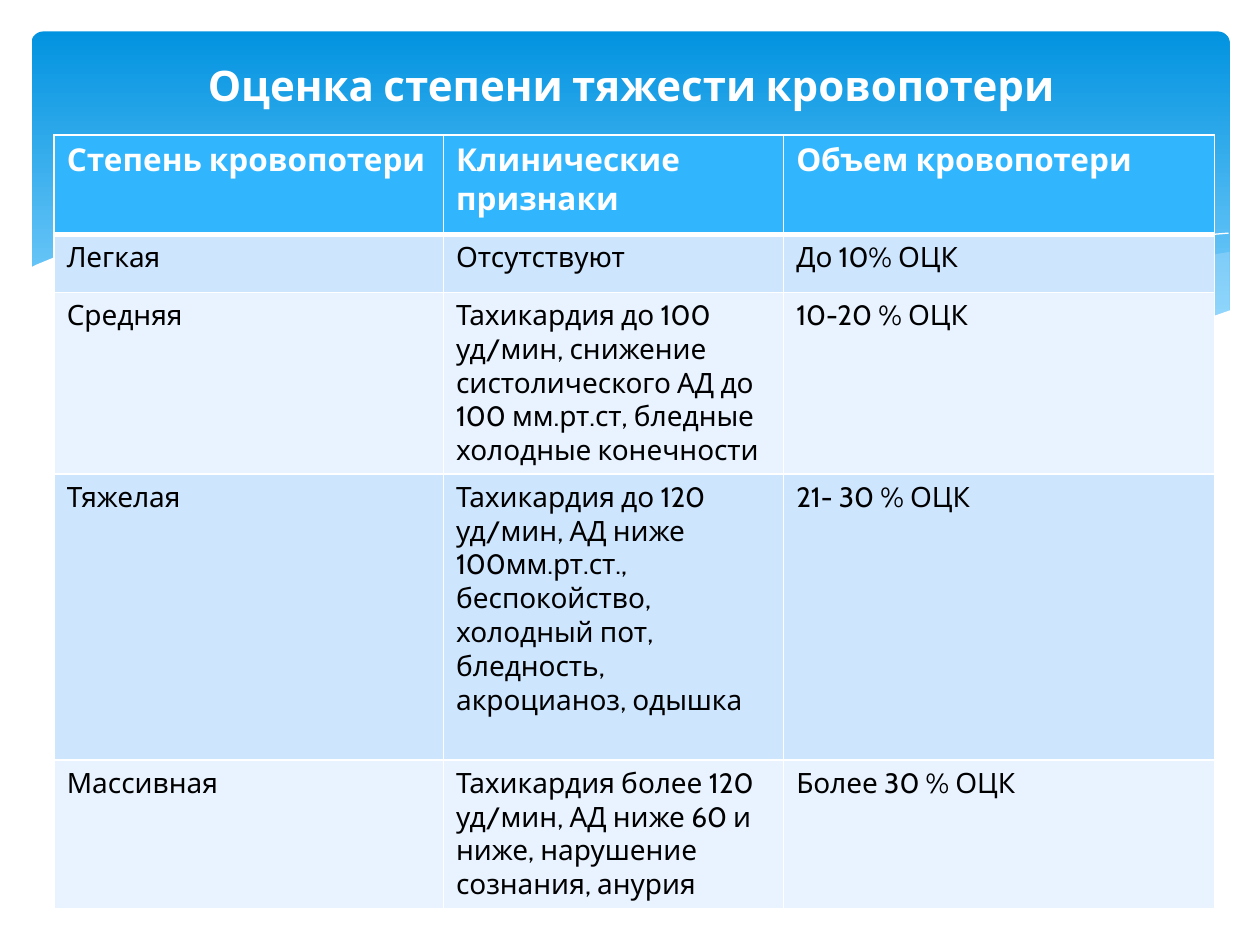
from lxml import etree
from pptx import Presentation
from pptx.dml.color import RGBColor
from pptx.enum.shapes import MSO_SHAPE
from pptx.enum.text import MSO_ANCHOR, PP_ALIGN
from pptx.oxml.ns import qn
from pptx.util import Pt

PX = 9144
FONT = "Cabin"
ROUND = MSO_SHAPE.ROUNDED_RECTANGLE
MIDDLE = MSO_ANCHOR.MIDDLE
CENTER = PP_ALIGN.CENTER
WHITE = RGBColor(0xFF, 0xFF, 0xFF)
BLACK = RGBColor(0x00, 0x00, 0x00)
DEEP = RGBColor(0x02, 0x93, 0xE0)
SKY = RGBColor(0x83, 0xD3, 0xFE)
MIST = RGBColor(0xC6, 0xE7, 0xFC)
HEAD = RGBColor(0x31, 0xB6, 0xFD)
BANDS = (RGBColor(0xE8, 0xF3, 0xFF), RGBColor(0xCE, 0xE5, 0xFE))

RIGHT = [(952, 16), (912, 23), (868, 32), (782, 53), (706, 69), (638, 81),
         (696, 88), (746, 93), (791, 94), (831, 92), (866, 88), (898, 81),
         (926, 73), (953, 63), (953, 16)]
LONG = [(870, 89), (784, 76), (683, 56), (606, 38), (546, 24), (491, 14),
        (442, 7), (397, 3), (357, 1), (321, 2), (290, 4), (263, 7),
        (319, 15), (381, 27), (468, 48), (561, 68), (642, 82), (713, 91),
        (773, 94), (825, 93)]
FALL = [(286, 11), (321, 6), (364, 3), (410, 3), (466, 6), (533, 13),
        (613, 24), (704, 42), (808, 67), (884, 88)]
RISE = [(590, 73), (649, 57), (725, 39), (813, 20), (872, 10), (915, 4),
        (952, 1)]
FRONT = [(954, 62), (917, 75), (876, 85), (827, 91), (770, 92), (703, 88),
         (625, 78), (532, 61), (424, 36), (342, 18), (269, 6), (207, 1),
         (154, 0), (109, 2), (72, 7), (44, 13), (23, 19), (6, 26), (0, 29),
         (0, 145), (954, 145)]

COLS = (309, 270, 342)
ROWS = (79, 46, 144, 227, 118)
DATA = (
    ("Степень кровопотери", "Клинические признаки", "Объем кровопотери"),
    ("Легкая", "Отсутствуют", "До 10% ОЦК"),
    ("Средняя",
     "Тахикардия до 100 уд/мин, снижение систолического АД до "
     "100 мм.рт.ст, бледные холодные конечности",
     "10-20 % ОЦК"),
    ("Тяжелая",
     "Тахикардия до 120 уд/мин, АД ниже 100мм.рт.ст., беспокойство, "
     "холодный пот, бледность, акроцианоз, одышка",
     "21- 30 % ОЦК"),
    ("Массивная",
     "Тахикардия более 120 уд/мин, АД ниже 60 и ниже, нарушение "
     "сознания, анурия",
     "Более 30 % ОЦК"),
)


def emu(box):
    """Turn a box in px into EMU."""
    return [n * PX for n in box]


def style(para, size, color, bold):
    """Format every run of a paragraph."""
    for run in para.runs:
        font = run.font
        font.name, font.size, font.bold = FONT, Pt(size), bold
        font.color.rgb = color


def banner(slide, box):
    """Draw the rounded gradient band."""
    shape = slide.shapes.add_shape(ROUND, *emu(box))
    shape.adjustments[0] = 0.034
    shape.shadow.inherit = False
    shape.line.fill.background()
    shape.fill.gradient()
    shape.fill.gradient_angle = 270
    for stop, color, pos in zip(shape.fill.gradient_stops, (DEEP, SKY), (0, 0.9)):
        stop.color.rgb = color
        stop.position = pos


def curve(slide, box, points, closed):
    """Trace points measured from the corner of the box."""
    left, top = box[:2]
    spots = [(left + x, top + y) for x, y in points]
    pen = slide.shapes.build_freeform(*spots[0], scale=PX)
    pen.add_line_segments(spots[1:], close=closed)
    shape = pen.convert_to_shape()
    shape.shadow.inherit = False
    return shape


def waves(slide, box):
    """Draw the pale ribbons, the thin lines and the white front wave."""
    for points, color, alpha in ((RIGHT, MIST, 29), (LONG, MIST, 40),
                                 (FALL, None, 0), (RISE, None, 0),
                                 (FRONT, WHITE, 100)):
        shape = curve(slide, box, points, color is not None)
        if color is None:
            shape.fill.background()
            shape.line.color.rgb = WHITE
            shape.line.width = Pt(0)
            continue
        shape.line.fill.background()
        shape.fill.solid()
        shape.fill.fore_color.rgb = color
        if alpha < 100:
            tint = next(shape.fill._xPr.iter(qn("a:srgbClr")))
            etree.SubElement(tint, qn("a:alpha"), val=str(alpha * 1000))


def border(cell, row):
    """Give a cell white edges, thick below the header."""
    props = cell._tc.get_or_add_tcPr()
    thick = {0: "lnB", 1: "lnT"}.get(row)
    for side in ("lnL", "lnR", "lnT", "lnB"):
        width = Pt(3 if side == thick else 1)
        line = etree.SubElement(props, qn("a:" + side), w=str(width))
        fill = etree.SubElement(line, qn("a:solidFill"))
        etree.SubElement(fill, qn("a:srgbClr"), val=str(WHITE))


def grid(slide, box):
    """Build the table of blood loss degrees."""
    frame = slide.shapes.add_table(len(ROWS), len(COLS), *emu(box))
    table = frame.table
    for col, width in zip(table.columns, COLS):
        col.width = width * PX
    for row, height in zip(table.rows, ROWS):
        row.height = height * PX
    for i, texts in enumerate(DATA):
        top = i == 0
        for j, text in enumerate(texts):
            cell = table.cell(i, j)
            border(cell, i)
            cell.fill.solid()
            cell.fill.fore_color.rgb = HEAD if top else BANDS[i % 2]
            cell.text_frame.text = text
            style(cell.text_frame.paragraphs[0], 18 if top else 16,
                  WHITE if top else BLACK, top)


def title(slide, box):
    """Place the centred heading."""
    frame = slide.shapes.add_textbox(*emu(box)).text_frame
    frame.word_wrap = True
    frame.vertical_anchor = MIDDLE
    frame.text = "Оценка степени тяжести кровопотери"
    para = frame.paragraphs[0]
    para.alignment = CENTER
    style(para, 24, WHITE, True)


def main():
    """Build and save the slide."""
    deck = Presentation()
    deck.slide_width, deck.slide_height = emu((1000, 750))
    slide = deck.slides.add_slide(deck.slide_layouts[6])
    banner(slide, (25, 25, 951, 270))
    waves(slide, (23, 184, 954, 145))
    grid(slide, (43, 107, sum(COLS), sum(ROWS)))
    title(slide, (51, 36, 900, 62))
    deck.save("out.pptx")


if __name__ == "__main__":
    main()
